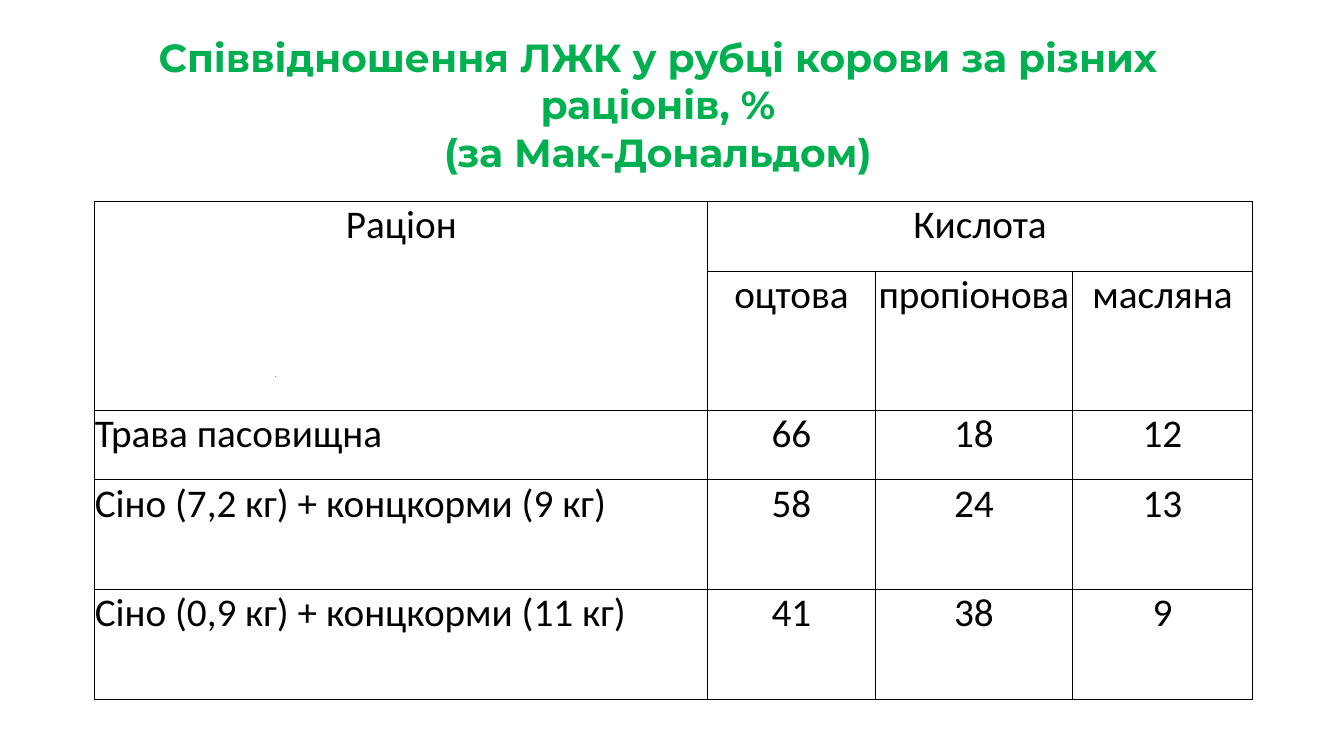
"""Build a slide with a table of rumen acid shares by cow ration."""
from pptx import Presentation
from pptx.dml.color import RGBColor
from pptx.enum.shapes import MSO_CONNECTOR
from pptx.enum.text import MSO_ANCHOR, PP_ALIGN
from pptx.oxml.ns import qn
from pptx.util import Inches, Pt
from lxml.etree import SubElement

TITLE = ["Співвідношення ЛЖК у рубці корови за різних раціонів, %",
         "(за Мак-Дональдом)"]
ROWS = [
    ("Раціон", "Кислота", "", ""),
    ("", "оцтова", "пропіонова", "масляна"),
    ("Трава пасовищна", "66", "18", "12"),
    ("Сіно (7,2 кг) + концкорми (9 кг)", "58", "24", "13"),
    ("Сіно (0,9 кг) + концкорми (11 кг)", "41", "38", "9"),
]
MERGES = [((0, 0), (1, 0)), ((0, 1), (0, 3))]
HEADS = 2
WIDTHS = [6.08, 1.66, 1.96, 1.78]
HEIGHTS = [0.69, 1.38, 0.69, 1.09, 1.09]
PLACES = {"title": (0.62, 0.26, 11.81, 1.55),
          "table": (0.94, 2, sum(WIDTHS), sum(HEIGHTS)),
          "tick": (2.73, 3.74, 2.73, 3.73)}
THEME = {
    "title": {"name": "Montserrat", "size": Pt(28), "bold": True, "color": "00B050"},
    "cell": {"name": "Calibri", "size": Pt(28), "bold": False, "color": "000000"},
    "fill": "FFFFFF", "rule": "000000", "rule_pt": 1,
    "tick": "5B9BD5", "tick_pt": 0.5,
}
FLUSH = {f"margin_{side}": 0 for side in ("left", "top", "right", "bottom")}


def assign(item, values):
    for key, value in values.items():
        setattr(item, key, value)


def write(para, text, style, align):
    run = para.add_run()
    run.text = text
    para.alignment = align
    assign(run.font, {k: v for k, v in style.items() if k != "color"})
    run.font.color.rgb = RGBColor.from_string(style["color"])


def border(cell):
    props = cell._tc.get_or_add_tcPr()
    for side in ("lnL", "lnR", "lnT", "lnB"):
        line = SubElement(props, qn(f"a:{side}"), w=str(Pt(THEME["rule_pt"])))
        fill = SubElement(line, qn("a:solidFill"))
        SubElement(fill, qn("a:srgbClr"), val=THEME["rule"])


def add_title(slide):
    title = slide.shapes.title
    box = map(Inches, PLACES["title"])
    assign(title, dict(zip(("left", "top", "width", "height"), box)))
    frame = title.text_frame
    assign(frame, {"word_wrap": True, "vertical_anchor": MSO_ANCHOR.MIDDLE})
    for num, text in enumerate(TITLE):
        para = frame.add_paragraph() if num else frame.paragraphs[0]
        write(para, text, THEME["title"], PP_ALIGN.CENTER)


def add_grid(slide):
    box = map(Inches, PLACES["table"])
    table = slide.shapes.add_table(len(ROWS), len(WIDTHS), *box).table
    assign(table, {"first_row": False, "horz_banding": False})
    for col, width in zip(table.columns, WIDTHS):
        col.width = Inches(width)
    for row, height in zip(table.rows, HEIGHTS):
        row.height = Inches(height)
    for start, end in MERGES:
        table.cell(*start).merge(table.cell(*end))
    for r, row in enumerate(ROWS):
        for c, text in enumerate(row):
            cell = table.cell(r, c)
            assign(cell, FLUSH)
            border(cell)
            cell.fill.solid()
            cell.fill.fore_color.rgb = RGBColor.from_string(THEME["fill"])
            if text:
                align = PP_ALIGN.CENTER if c or r < HEADS else PP_ALIGN.LEFT
                write(cell.text_frame.paragraphs[0], text, THEME["cell"], align)


def add_tick(slide):
    ends = map(Inches, PLACES["tick"])
    tick = slide.shapes.add_connector(MSO_CONNECTOR.STRAIGHT, *ends)
    tick.line.color.rgb = RGBColor.from_string(THEME["tick"])
    tick.line.width = Pt(THEME["tick_pt"])
    SubElement(tick._element.spPr, qn("a:effectLst"))


def main():
    deck = Presentation()
    assign(deck, {"slide_width": Inches(13.33), "slide_height": Inches(7.5)})
    slide = deck.slides.add_slide(deck.slide_layouts[5])
    add_grid(slide)
    add_title(slide)
    add_tick(slide)
    deck.save("out.pptx")


if __name__ == "__main__":
    main()
